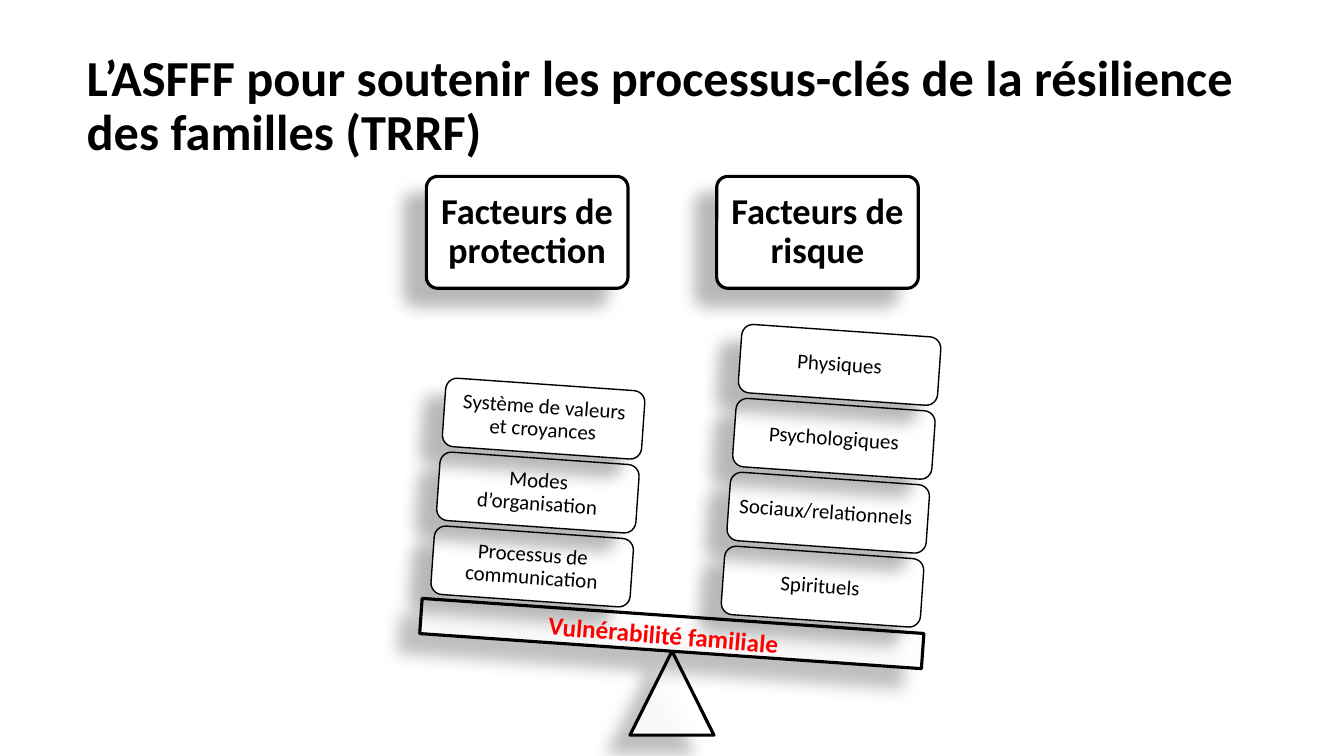
from dataclasses import dataclass

from lxml import etree
from pptx import Presentation, util as u
from pptx.dml.color import RGBColor
from pptx.enum import shapes as es, text as et
from pptx.oxml import ns

# Grid: 160 columns by 90 rows
SLIDE_W, SLIDE_H = u.Inches(13.33), u.Inches(7.5)
COLUMNS, ROWS = 160, 90
BLACK, WHITE, RED = "000000", "FFFFFF", "FF0000"
TILT = 4
SHADOW = {"blurRad": u.Pt(11.8), "dist": u.Pt(19.7), "dir": 141 * 60000,
          "algn": "ctr", "rotWithShape": 0}


@dataclass
class Area:
    """A rectangle in columns and rows."""
    left: float
    top: float
    width: float
    height: float

    def emu(self) -> tuple[int, ...]:
        return (int(self.left * SLIDE_W / COLUMNS), int(self.top * SLIDE_H / ROWS),
                int(self.width * SLIDE_W / COLUMNS), int(self.height * SLIDE_H / ROWS))


@dataclass
class Factors:
    """One side of the balance; weights run from bottom to top."""
    heading: str
    heading_left: float
    weight_left: float
    weight_top: float
    weights: list[str]


SIDES = [
    Factors("Facteurs de risque", 85.32, 86.04, 65.76,
            ["Spirituels ", "Sociaux/relationnels ", "Psychologiques", "Physiques"]),
    Factors("Facteurs de protection", 50.76, 51.48, 63.36,
            ["Processus de communication", "Modes d’organisation",
             "Système de valeurs et croyances"]),
]
HEADING_TOP, HEADING_W, HEADING_H = 21, 24, 13.32
WEIGHT_W, WEIGHT_H = 23.76, 8.16
STEP_RIGHT, STEP_UP = 0.68, 8.8


def rgb(color: str) -> RGBColor:
    return RGBColor.from_string(color)


def set_all(target, **values) -> None:
    for name, value in values.items():
        setattr(target, name, value)


def write(frame, words: str, size: float, color: str = BLACK, bold: bool = False,
          align=et.PP_ALIGN.CENTER, inset: float = 0.1, spacing: float = 0.9) -> None:
    frame.text = words
    margin = u.Inches(inset)
    set_all(frame, word_wrap=True, auto_size=et.MSO_AUTO_SIZE.NONE,
            vertical_anchor=et.MSO_ANCHOR.MIDDLE, margin_left=margin,
            margin_right=margin, margin_top=margin, margin_bottom=margin)
    paragraph = frame.paragraphs[0]
    set_all(paragraph, alignment=align, line_spacing=spacing)
    font = paragraph.runs[0].font
    set_all(font, name="Calibri", size=u.Pt(size), bold=bold)
    font.color.rgb = rgb(color)


def add_alpha(color_element, percent: int) -> None:
    etree.SubElement(color_element, ns.qn("a:alpha"), val=str(percent * 1000))


def add_piece(slide, kind, area: Area, line: float, tilt: float = 0, opacity: int = 100):
    piece = slide.shapes.add_shape(kind, *area.emu())
    piece.rotation = tilt
    piece.fill.solid()
    piece.fill.fore_color.rgb = rgb(WHITE)
    piece.line.color.rgb = rgb(BLACK)
    piece.line.width = u.Pt(line)
    properties = piece._element.spPr
    if opacity < 100:
        add_alpha(properties.find(ns.qn("a:solidFill"))[0], opacity)
    # Soft shadow towards the lower left
    piece.shadow.inherit = False
    effects = properties.find(ns.qn("a:effectLst"))
    shadow = etree.SubElement(effects, ns.qn("a:outerShdw"),
                              {key: str(value) for key, value in SHADOW.items()})
    add_alpha(etree.SubElement(shadow, ns.qn("a:srgbClr"), val=BLACK), 28)
    return piece


def add_heading(slide, side: Factors) -> None:
    area = Area(side.heading_left, HEADING_TOP, HEADING_W, HEADING_H)
    heading = add_piece(slide, es.MSO_SHAPE.ROUNDED_RECTANGLE, area, 2.25)
    heading.adjustments[0] = 0.1
    write(heading.text_frame, side.heading, 26, bold=True, inset=0.06)


def add_weights(slide, side: Factors) -> None:
    for level, words in enumerate(side.weights):
        area = Area(side.weight_left + level * STEP_RIGHT,
                    side.weight_top - level * STEP_UP, WEIGHT_W, WEIGHT_H)
        weight = add_piece(slide, es.MSO_SHAPE.ROUNDED_RECTANGLE, area, 1, TILT)
        write(weight.text_frame, words, 15, inset=0.06)


def main() -> None:
    deck = Presentation()
    set_all(deck, slide_width=SLIDE_W, slide_height=SLIDE_H)
    slide = deck.slides.add_slide(deck.slide_layouts[5])

    # Title
    title = slide.shapes.title
    left, top, width, height = Area(9.12, 5.28, 142.68, 15).emu()
    set_all(title, left=left, top=top, width=width, height=height)
    write(title.text_frame,
          "L’ASFFF pour soutenir les processus-clés de la résilience des familles (TRRF)",
          36, bold=True, align=et.PP_ALIGN.LEFT)

    # Headings, then the pivot and beam, then the weights on top
    for side in SIDES:
        add_heading(slide, side)
    add_piece(slide, es.MSO_SHAPE.ISOSCELES_TRIANGLE, Area(75, 77.52, 10, 10), 2.25,
              opacity=90)
    add_piece(slide, es.MSO_SHAPE.RECTANGLE, Area(50.04, 73.32, 59.88, 4.2), 2.25,
              TILT, opacity=90)
    for side in SIDES:
        add_weights(slide, side)

    # Beam label
    vulnerability = slide.shapes.add_textbox(*Area(64.08, 73.56, 40.68, 4.8).emu())
    vulnerability.rotation = 4.7
    write(vulnerability.text_frame, "Vulnérabilité familiale", 18, RED, True,
          et.PP_ALIGN.LEFT, spacing=1.0)

    deck.save("out.pptx")


if __name__ == "__main__":
    main()
